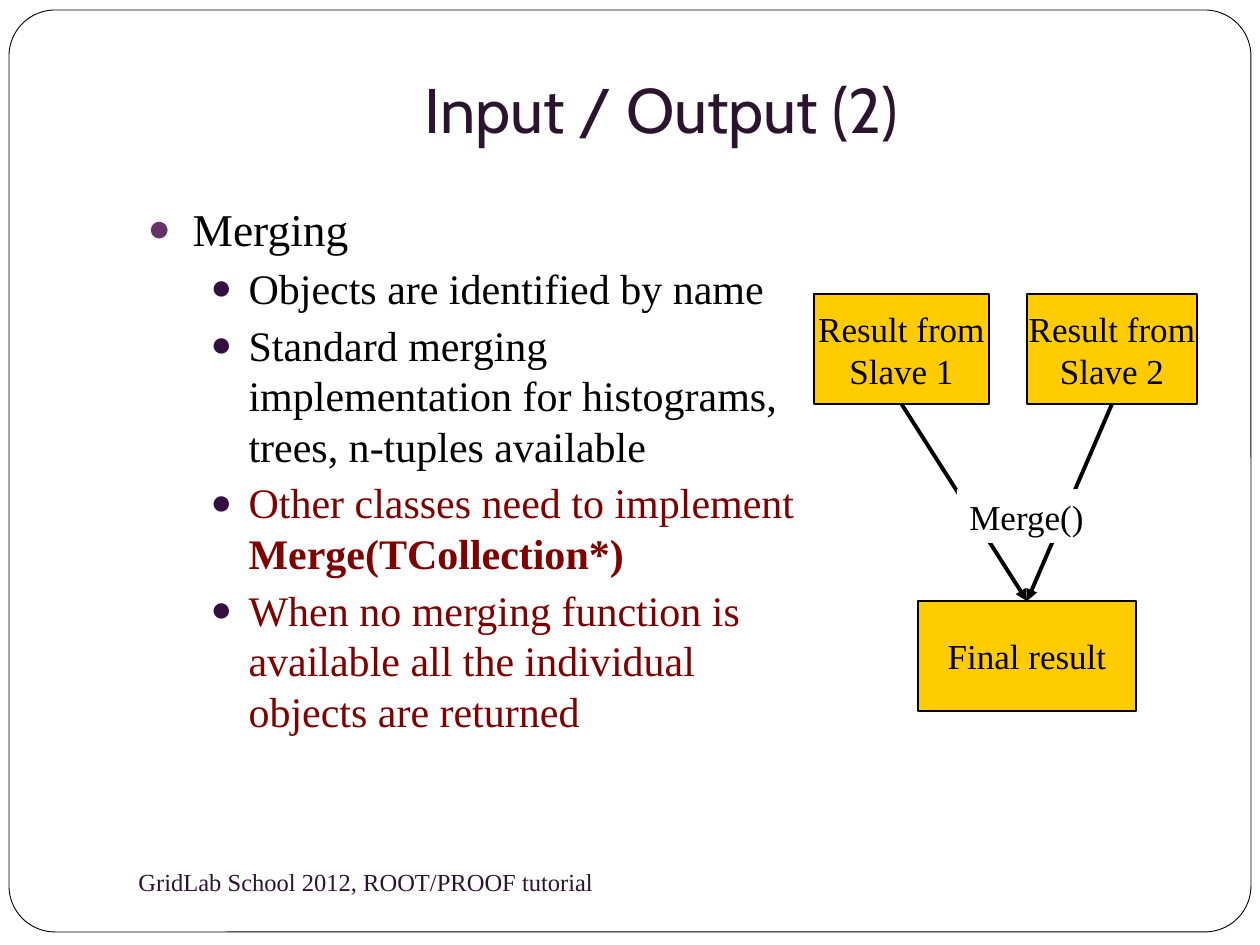
import pptx
import pptx.util
import pptx.dml.color
import pptx.enum.shapes
import pptx.enum.text
import pptx.oxml
import pptx.oxml.ns
import lxml.etree

PX = 914400 / 126
SERIF = "Times New Roman"
HUES = {"ink": "000000", "page": "FFFFFF", "plum": "2B142D", "dot": "663366",
        "subdot": "330F42", "red": "800000", "gold": "FFCC00"}
KINDS = pptx.enum.shapes.MSO_SHAPE
ALIGN = pptx.enum.text.PP_ALIGN
ANCHOR = pptx.enum.text.MSO_ANCHOR
FIT = pptx.enum.text.MSO_AUTO_SIZE
qn = pptx.oxml.ns.qn


def px(*nums):
    return [round(n * PX) for n in nums]


def write(para, text, size, hue="ink", face=SERIF, bold=False):
    run = para.add_run()
    run.text = text
    run.font.size = pptx.util.Pt(size)
    run.font.name = face
    run.font.bold = bold
    run.font.color.rgb = pptx.dml.color.RGBColor.from_string(HUES[hue])


deck = pptx.Presentation()
deck.slide_width, deck.slide_height = px(1260, 945)
slide = deck.slides.add_slide(deck.slide_layouts[1])
shapes = slide.shapes

frame = shapes.add_shape(KINDS.ROUNDED_RECTANGLE, *px(9, 10, 1242, 922))
frame.adjustments[0] = 0.05
frame.shadow.inherit = False
frame.fill.solid()
frame.fill.fore_color.rgb = pptx.dml.color.RGBColor.from_string(HUES["page"])
frame.line.color.rgb = pptx.dml.color.RGBColor.from_string(HUES["ink"])
frame.line.width = pptx.util.Pt(0.5)
shapes._spTree.insert(2, frame._element)

title = shapes.title
title.left, title.top, title.width, title.height = px(126, 38, 1071, 121)
text = title.text_frame
text.auto_size = FIT.NONE
text.vertical_anchor = ANCHOR.BOTTOM
text.margin_bottom = pptx.util.Inches(0.1)
text.paragraphs[0].alignment = ALIGN.CENTER
write(text.paragraphs[0], "Input / Output (2)", 36, "plum", "Cabin")

foot = shapes.add_textbox(*px(126, 850, 546, 63)).text_frame
foot.word_wrap = True
foot.vertical_anchor = ANCHOR.MIDDLE
write(foot.paragraphs[0], "GridLab School 2012, ROOT/PROOF tutorial", 14, "plum")

body = slide.placeholders[1]
body.left, body.top, body.width, body.height = px(135, 195, 685, 596)
text = body.text_frame
text.auto_size = FIT.NONE
levels = [(26, 5.8, 45, 45, "dot"), (24, 3.7, 101, 38, "subdot")]
items = [
    (0, "ink", ["Merging"]),
    (1, "ink", ["Objects are identified by name"]),
    (1, "ink", ["Standard merging implementation for histograms, trees, n-tuples available"]),
    (1, "red", ["Other classes need to implement ", "Merge(TCollection*)"]),
    (1, "red", ["When no merging function is available all the individual objects are returned"]),
]
for i, (level, hue, parts) in enumerate(items):
    para = text.add_paragraph() if i else text.paragraphs[0]
    size, gap, left, hang, dot = levels[level]
    para.level = level
    para.space_before = pptx.util.Pt(gap)
    props = para._p.get_or_add_pPr()
    props.set("marL", str(px(left)[0]))
    props.set("indent", str(px(-hang)[0]))
    tint = lxml.etree.SubElement(props, qn("a:buClr"))
    lxml.etree.SubElement(tint, qn("a:srgbClr"), val=HUES[dot])
    lxml.etree.SubElement(props, qn("a:buSzPct"), val="85000")
    lxml.etree.SubElement(props, qn("a:buChar"), char="●")
    for j, part in enumerate(parts):
        write(para, part, size, hue, bold=j > 0)

boxes = []
for lines, spot in [
    (["Result from", "Slave 1"], (814, 294, 175, 110)),
    (["Result from", "Slave 2"], (1027, 294, 170, 110)),
    (["Final result"], (918, 601, 218, 110)),
]:
    box = shapes.add_shape(KINDS.RECTANGLE, *px(*spot))
    box.shadow.inherit = False
    box.fill.solid()
    box.fill.fore_color.rgb = pptx.dml.color.RGBColor.from_string(HUES["gold"])
    box.line.color.rgb = pptx.dml.color.RGBColor.from_string(HUES["ink"])
    box.line.width = pptx.util.Pt(1)
    text = box.text_frame
    text.word_wrap = False
    text.vertical_anchor = ANCHOR.MIDDLE
    for i, line in enumerate(lines):
        para = text.add_paragraph() if i else text.paragraphs[0]
        para.alignment = ALIGN.CENTER
        write(para, line, 20)
    boxes.append(box)

*slaves, final = boxes
for slave in slaves:
    arrow = shapes.add_connector(pptx.enum.shapes.MSO_CONNECTOR.STRAIGHT, 0, 0, 0, 0)
    arrow.begin_connect(slave, 2)
    arrow.end_connect(final, 0)
    arrow.line.color.rgb = pptx.dml.color.RGBColor.from_string(HUES["ink"])
    arrow.line.width = pptx.util.Pt(2.25)
    lxml.etree.SubElement(arrow.line._get_or_add_ln(), qn("a:tailEnd"), type="triangle")
    lxml.etree.SubElement(arrow._element.spPr, qn("a:effectLst"))

merge = shapes.add_textbox(*px(957, 489, 151, 54))
merge.fill.solid()
merge.fill.fore_color.rgb = pptx.dml.color.RGBColor.from_string(HUES["page"])
merge.text_frame.word_wrap = False
merge.text_frame.auto_size = FIT.SHAPE_TO_FIT_TEXT
write(merge.text_frame.paragraphs[0], "Merge()", 20)

deck.save("out.pptx")
